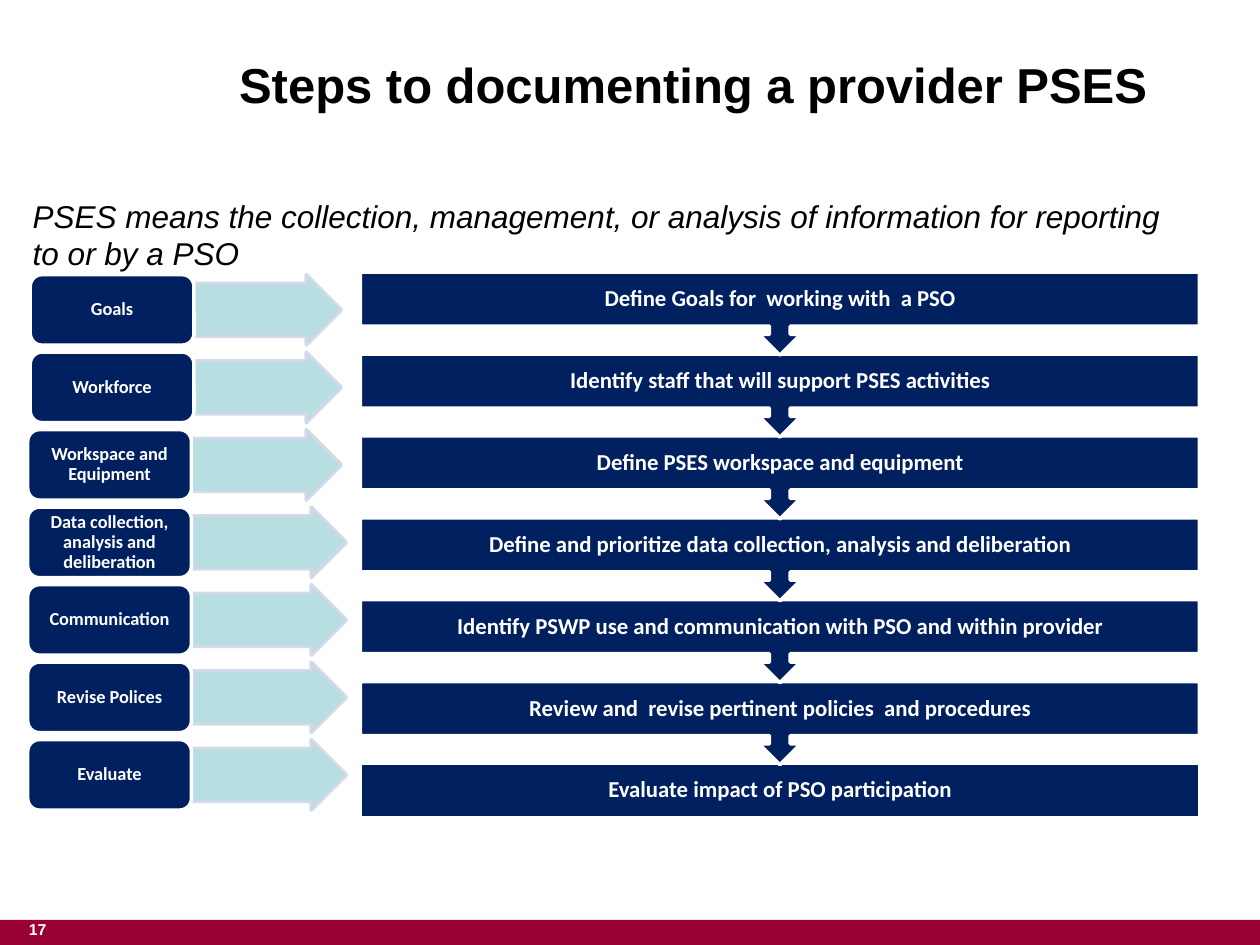
import pptx
import pptx.dml.color
import pptx.enum.shapes
import pptx.enum.text
import pptx.oxml
import pptx.util
from pptx.util import Inches

COLORS = {
    "navy": "002060",
    "teal": "B0DBDE",
    "edge": "D0D8E8",
    "maroon": "990033",
    "white": "FFFFFF",
    "black": "000000",
}
SHAPES = pptx.enum.shapes.MSO_SHAPE
ANCHOR = pptx.enum.text.MSO_ANCHOR
ALIGN = pptx.enum.text.PP_ALIGN

STEPS = [
    ("Goals", "Define Goals for  working with  a PSO"),
    ("Workforce", "Identify staff that will support PSES activities"),
    ("Workspace and Equipment", "Define PSES workspace and equipment"),
    ("Data collection, analysis and deliberation",
     "Define and prioritize data collection, analysis and deliberation"),
    ("Communication",
     "Identify PSWP use and communication with PSO and within provider"),
    ("Revise Polices", "Review and  revise pertinent policies  and procedures"),
    ("Evaluate", "Evaluate impact of PSO participation"),
]


def color(name):
    return pptx.dml.color.RGBColor.from_string(COLORS[name])


def write_text(box, text, size, font="Arial", shade="white", bold=False,
               italic=False, align=ALIGN.LEFT, anchor=ANCHOR.TOP,
               insets=(0.1, 0.05), spacing=None):
    frame = box.text_frame
    frame.word_wrap = True
    frame.vertical_anchor = anchor
    frame.margin_left = frame.margin_right = Inches(insets[0])
    frame.margin_top = frame.margin_bottom = Inches(insets[1])
    paragraph = frame.paragraphs[0]
    paragraph.text = text
    paragraph.alignment = align
    if spacing:
        paragraph.line_spacing = spacing
    paragraph.font.name = font
    paragraph.font.size = pptx.util.Pt(size)
    paragraph.font.bold = bold
    paragraph.font.italic = italic
    paragraph.font.color.rgb = color(shade)


def add_text(page, left, top, width, height, text, size, **style):
    box = page.shapes.add_textbox(
        Inches(left), Inches(top), Inches(width), Inches(height))
    write_text(box, text, size, **style)


def add_block(page, kind, left, top, width, height, fill, line=None):
    block = page.shapes.add_shape(
        kind, Inches(left), Inches(top), Inches(width), Inches(height))
    block.shadow.inherit = False
    block.fill.solid()
    block.fill.fore_color.rgb = color(fill)
    if line:
        block.line.color.rgb = color(line)
        block.line.width = pptx.util.Pt(2)
    else:
        block.line.fill.background()
    return block


def set_opacity(block, percent):
    for shade in block._element.spPr.iter(pptx.oxml.ns.qn("a:srgbClr")):
        alpha = pptx.oxml.xmlchemy.OxmlElement("a:alpha")
        alpha.set("val", str(percent * 1000))
        shade.append(alpha)


def add_step_bar(page, row, text):
    is_last = row == len(STEPS) - 1
    kind = SHAPES.RECTANGLE if is_last else SHAPES.DOWN_ARROW_CALLOUT
    height = 0.43 if is_last else 0.66
    bar = add_block(page, kind, 2.86, 2.16 + 0.65 * row, 6.66, height,
                    "navy", "white")
    write_text(bar, text, 13, font="Calibri", bold=True, align=ALIGN.CENTER,
               anchor=ANCHOR.MIDDLE, insets=(0.1, 0.1), spacing=0.9)


def add_topic(page, row, text):
    top = 2.18 + 0.615 * row
    arrow_left = 1.49 if row < 3 else 1.53
    label_left = 0.24 if row < 2 else 0.22
    arrow = add_block(page, SHAPES.RIGHT_ARROW, arrow_left, top, 1.22, 0.56,
                      "teal", "edge")
    arrow.adjustments[0] = 0.75
    arrow.adjustments[1] = 0.5
    set_opacity(arrow, 90)
    label = add_block(page, SHAPES.ROUNDED_RECTANGLE, label_left, top,
                      1.3, 0.56, "navy", "white")
    write_text(label, text, 10.5, font="Calibri", bold=True,
               align=ALIGN.CENTER, anchor=ANCHOR.MIDDLE,
               insets=(0.05, 0.02), spacing=0.9)


def main():
    deck = pptx.Presentation()
    deck.slide_width = Inches(10)
    deck.slide_height = Inches(7.5)
    page = deck.slides.add_slide(deck.slide_layouts[6])

    add_block(page, SHAPES.RECTANGLE, 0, 7.3, 10, 0.2, "maroon")
    add_text(page, 0.13, 7.25, 0.91, 0.25, "17", 9, bold=True)
    for row, (topic, step) in reversed(list(enumerate(STEPS))):
        add_step_bar(page, row, step)
    add_text(page, 1.8, 0.3, 7.93, 0.74,
             "Steps to documenting a provider PSES", 28, shade="black",
             bold=True, anchor=ANCHOR.MIDDLE)
    for row, (topic, step) in enumerate(STEPS):
        add_topic(page, row, topic)
    add_text(page, 0.24, 1.54, 9.24, 0.65,
             "PSES means the collection, management, or analysis of "
             "information for reporting to or by a PSO", 18, shade="black",
             italic=True, insets=(0.02, 0.02))
    deck.save("out.pptx")


if __name__ == "__main__":
    main()
